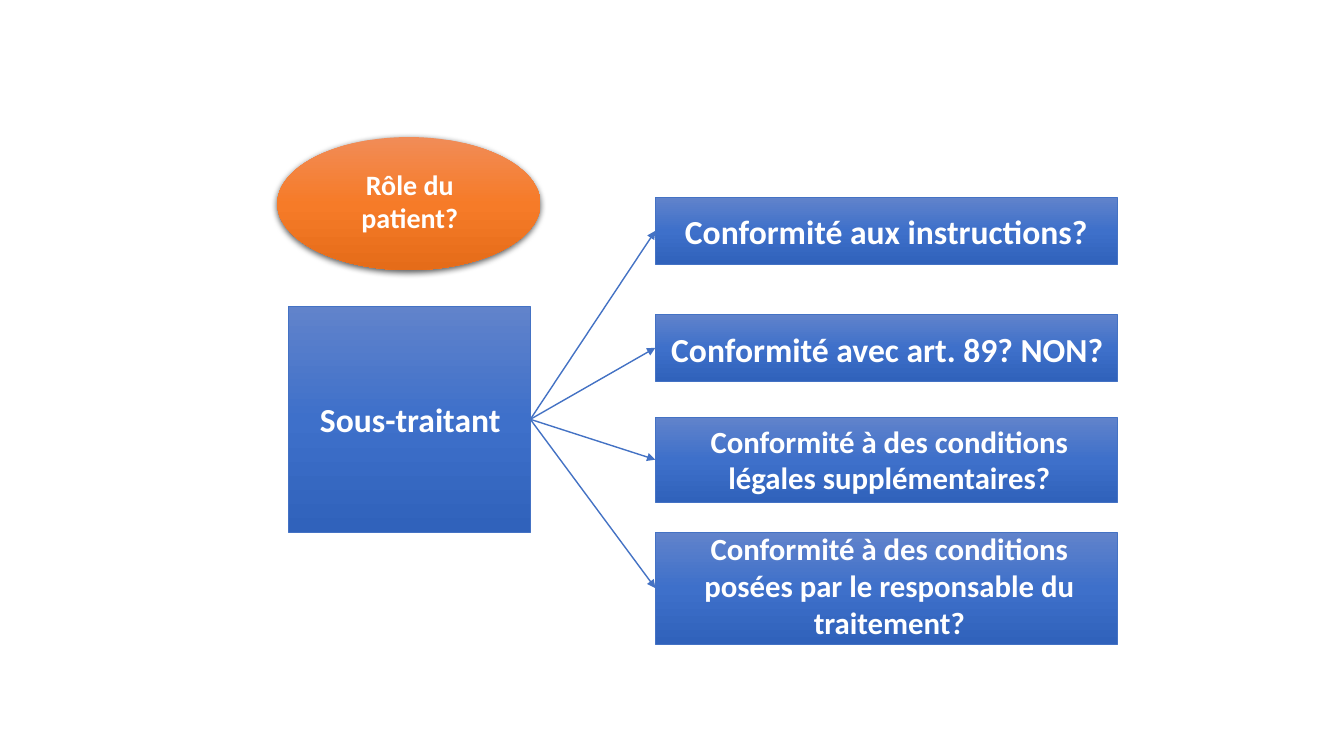
import copy

import pptx
import pptx.dml.color
import pptx.enum.shapes
import pptx.enum.text
import pptx.oxml
import pptx.oxml.ns
import pptx.util
from pptx.util import Inches

RGBColor = pptx.dml.color.RGBColor
MSO_SHAPE = pptx.enum.shapes.MSO_SHAPE
qn = pptx.oxml.ns.qn

WHITE = RGBColor(0xFF, 0xFF, 0xFF)
OUTLINE_BLUE = RGBColor(0x44, 0x72, 0xC4)
BLUES = (RGBColor(0x61, 0x83, 0xCB), RGBColor(0x3E, 0x70, 0xCA), RGBColor(0x30, 0x62, 0xBB))
ORANGES = (RGBColor(0xF1, 0x8C, 0x57), RGBColor(0xF6, 0x7B, 0x28), RGBColor(0xE5, 0x6C, 0x19))

SOFT_SHADOW = (
    f'<a:effectLst {pptx.oxml.ns.nsdecls("a")}>'
    '<a:outerShdw blurRad="57150" dist="19050" dir="5400000" algn="ctr" rotWithShape="0">'
    '<a:srgbClr val="000000"><a:alpha val="63000"/></a:srgbClr>'
    '</a:outerShdw></a:effectLst>'
)


class Diagram:
    """Draws styled elements on one slide."""

    font_name = "Calibri"

    def __init__(self, slide):
        self.slide = slide

    def block(self, kind, box, colours, outline=None, shapes=None):
        shapes = shapes or self.slide.shapes
        block = shapes.add_shape(kind, *map(Inches, box))
        block.shadow.inherit = False
        block.fill.gradient()
        block.fill.gradient_angle = 270
        # A new gradient has two stops: add the middle one
        stop_list = block._element.spPr.find(".//" + qn("a:gsLst"))
        stop_list.insert(1, copy.deepcopy(stop_list[0]))
        for stop, colour, position in zip(block.fill.gradient_stops, colours, (0, 0.5, 1)):
            stop.color.rgb = colour
            stop.position = position
        if outline is None:
            block.line.fill.background()
        else:
            block.line.color.rgb = outline
            block.line.width = pptx.util.Pt(0.5)
        return block

    def label(self, text, box, size, shapes=None):
        shapes = shapes or self.slide.shapes
        frame = shapes.add_textbox(*map(Inches, box)).text_frame
        frame.word_wrap = True
        frame.auto_size = pptx.enum.text.MSO_AUTO_SIZE.SHAPE_TO_FIT_TEXT
        paragraph = frame.paragraphs[0]
        paragraph.text = text
        paragraph.alignment = pptx.enum.text.PP_ALIGN.CENTER
        paragraph.font.name = self.font_name
        paragraph.font.size = pptx.util.Pt(size)
        paragraph.font.bold = True
        paragraph.font.color.rgb = WHITE

    def arrow(self, source, target):
        """Link the right side of source to the left side of target."""
        arrow = self.slide.shapes.add_connector(
            pptx.enum.shapes.MSO_CONNECTOR.STRAIGHT, 0, 0, 0, 0)
        arrow.begin_connect(source, 3)
        arrow.end_connect(target, 1)
        arrow.line.color.rgb = OUTLINE_BLUE
        arrow.line.width = pptx.util.Pt(1)
        properties = arrow._element.spPr
        head = properties.makeelement(qn("a:tailEnd"), {"type": "triangle"})
        properties.find(qn("a:ln")).append(head)
        properties.append(properties.makeelement(qn("a:effectLst"), {}))

    def soft_shadow(self, block):
        properties = block._element.spPr
        properties.replace(properties.find(qn("a:effectLst")), pptx.oxml.parse_xml(SOFT_SHADOW))


def main():
    presentation = pptx.Presentation()
    presentation.slide_width = Inches(13.33)
    presentation.slide_height = Inches(7.5)
    diagram = Diagram(presentation.slides.add_slide(presentation.slide_layouts[6]))

    # Processor
    processor_group = diagram.slide.shapes.add_group_shape().shapes
    processor = diagram.block(MSO_SHAPE.RECTANGLE, (2.86, 3.04, 2.4, 2.24), BLUES,
                              OUTLINE_BLUE, processor_group)
    diagram.label("Sous-traitant", (2.87, 3.91, 2.4, 0.5), 24, processor_group)

    # Questions: wording, box top and height, label left, top and height, text size
    questions = [
        ("Conformité aux instructions?", 1.96, 0.66, 6.5, 2.04, 0.5, 24),
        ("Conformité avec art. 89? NON?", 3.12, 0.66, 6.51, 3.21, 0.5, 24),
        ("Conformité à des conditions légales supplémentaires?",
         4.14, 0.84, 6.53, 4.14, 0.84, 22),
        ("Conformité à des conditions posées par le responsable du traitement?",
         5.28, 1.11, 6.53, 5.21, 1.21, 22),
    ]
    width = 4.58
    for wording, top, height, label_left, label_top, label_height, size in questions:
        question = diagram.block(MSO_SHAPE.RECTANGLE, (6.5, top, width, height), BLUES,
                                 OUTLINE_BLUE)
        diagram.label(wording, (label_left, label_top, width, label_height), size)
        diagram.arrow(processor, question)

    # Patient role
    patient_role = diagram.block(MSO_SHAPE.OVAL, (2.75, 1.36, 2.61, 1.32), ORANGES)
    diagram.soft_shadow(patient_role)
    diagram.label("Rôle du patient?", (3.21, 1.61, 1.71, 0.77), 20)

    presentation.save("out.pptx")


if __name__ == "__main__":
    main()
